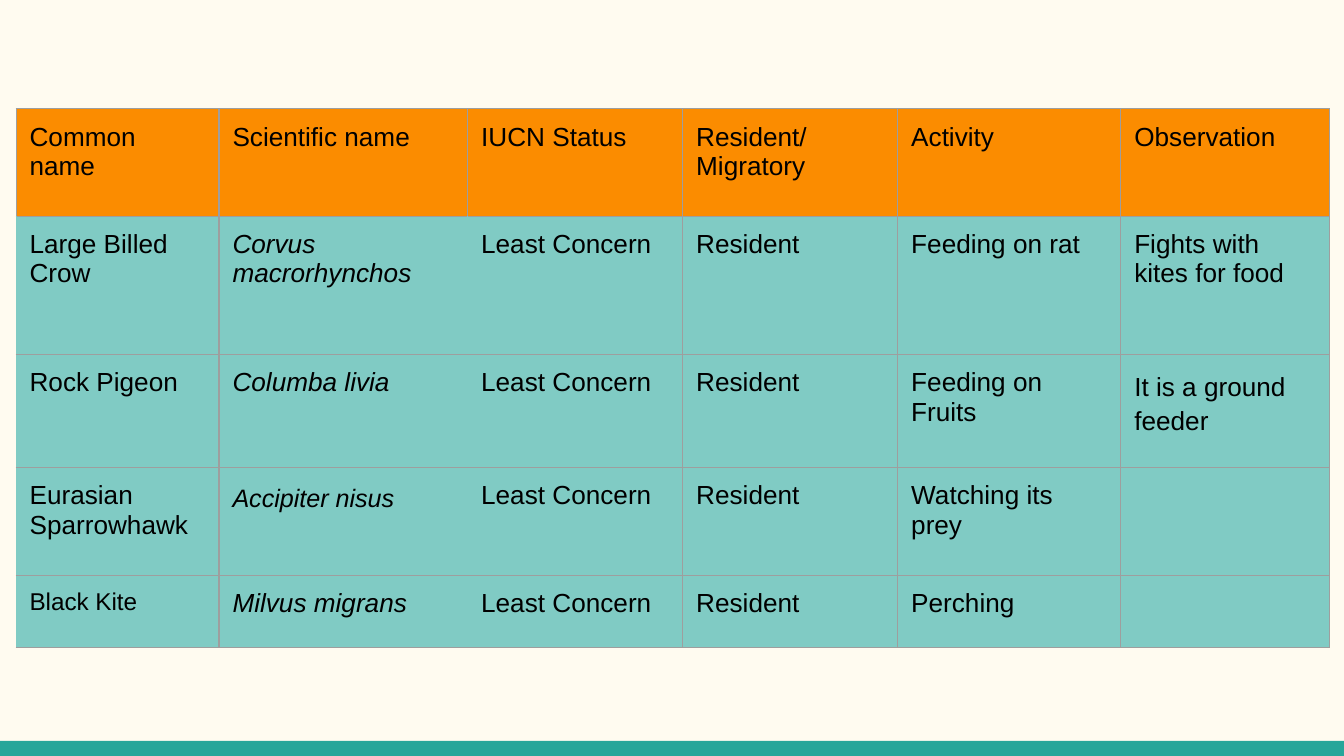
from dataclasses import dataclass

from lxml.etree import SubElement
from pptx import Presentation
from pptx.dml.color import RGBColor
from pptx.enum.shapes import MSO_SHAPE as Preset
from pptx.oxml.ns import qn
from pptx.slide import Slide
from pptx.table import _Cell as Cell
from pptx.util import Inches, Pt

SLIDE_WIDTH = Inches(10)
SLIDE_HEIGHT = SLIDE_WIDTH * 9 // 16
CREAM = RGBColor(0xFF, 0xFB, 0xF0)
GREEN = RGBColor(0x26, 0xA6, 0x9A)
ORANGE = RGBColor(0xFB, 0x8C, 0x00)
TEAL = RGBColor(0x80, 0xCB, 0xC4)
GREY = RGBColor(0x9E, 0x9E, 0x9E)
BLACK = RGBColor(0, 0, 0)

COLUMN_WIDTHS = (1.51, 1.85, 1.6, 1.6, 1.66, 1.55)
ROW_HEIGHTS = (0.8, 1.03, 0.84, 0.8, 0.54)
CELL_MARGIN = Inches(0.1)
COMMON, SCIENTIFIC, STATUS = range(3)


@dataclass(frozen=True)
class Entry:
    text: str
    size: float = 14
    italic: bool = False
    line_spacing: float | None = None
    space_after: float = 0


@dataclass(frozen=True)
class Bird:
    common: Entry
    scientific: Entry
    activity: Entry
    observation: Entry = Entry("")
    status: Entry = Entry("Least Concern")
    residence: Entry = Entry("Resident")

    def entries(self) -> tuple[Entry, ...]:
        return (self.common, self.scientific, self.status,
                self.residence, self.activity, self.observation)


HEADINGS = tuple(map(Entry, (
    "Common name", "Scientific name", "IUCN Status",
    "Resident/\nMigratory", "Activity", "Observation")))
BIRDS = (
    Bird(Entry("Large Billed Crow"), Entry("Corvus macrorhynchos", italic=True),
         Entry("Feeding on rat"), Entry("Fights with kites for food")),
    Bird(Entry("Rock Pigeon"), Entry("Columba livia", italic=True),
         Entry("Feeding on Fruits"),
         Entry("It is a ground feeder", line_spacing=1.15, space_after=12)),
    Bird(Entry("Eurasian Sparrowhawk"),
         Entry("Accipiter nisus", 13.5, italic=True, line_spacing=1.15),
         Entry("Watching its prey")),
    Bird(Entry("Black Kite", 13), Entry("Milvus migrans", italic=True),
         Entry("Perching")),
)


def border_colors(column: int, is_header: bool) -> dict[str, RGBColor]:
    """Grey on every side, except where a bird's border blends into the fill."""
    blends_left = not is_header and column in (COMMON, STATUS)
    blends_right = not is_header and column == SCIENTIFIC
    return {
        "a:lnL": TEAL if blends_left else GREY,
        "a:lnR": TEAL if blends_right else GREY,
        "a:lnT": GREY,
        "a:lnB": GREY,
    }


def draw_borders(cell: Cell, colors: dict[str, RGBColor]) -> None:
    properties = cell._tc.get_or_add_tcPr()
    for side, color in colors.items():
        line = SubElement(properties, qn(side), w=str(Pt(0.75)))
        fill = SubElement(line, qn("a:solidFill"))
        SubElement(fill, qn("a:srgbClr"), val=str(color))


def write_entry(cell: Cell, entry: Entry) -> None:
    cell.margin_left = cell.margin_right = CELL_MARGIN
    cell.margin_top = cell.margin_bottom = CELL_MARGIN
    cell.text = entry.text
    for paragraph in cell.text_frame.paragraphs:
        paragraph.space_after = Pt(entry.space_after)
        if entry.line_spacing:
            paragraph.line_spacing = entry.line_spacing
        font = paragraph.font
        font.name, font.size, font.italic = "Arial", Pt(entry.size), entry.italic
        font.color.rgb = BLACK


def draw_bird_table(slide: Slide) -> None:
    rows = (HEADINGS, *(bird.entries() for bird in BIRDS))
    table = slide.shapes.add_table(
        len(rows), len(HEADINGS), Inches(0.12), Inches(0.81),
        Inches(sum(COLUMN_WIDTHS)), Inches(sum(ROW_HEIGHTS))).table
    table.first_row = table.horz_banding = False
    for column, width in zip(table.columns, COLUMN_WIDTHS):
        column.width = Inches(width)
    for row, height in zip(table.rows, ROW_HEIGHTS):
        row.height = Inches(height)
    for r, entries in enumerate(rows):
        for c, entry in enumerate(entries):
            cell = table.cell(r, c)
            write_entry(cell, entry)
            draw_borders(cell, border_colors(c, is_header=r == 0))
            cell.fill.solid()
            cell.fill.fore_color.rgb = ORANGE if r == 0 else TEAL


def draw_footer_band(slide: Slide) -> None:
    height = round(SLIDE_HEIGHT * 0.02)
    band = slide.shapes.add_shape(
        Preset.RECTANGLE, 0, SLIDE_HEIGHT - height, SLIDE_WIDTH, height)
    band.shadow.inherit = False
    band.fill.solid()
    band.fill.fore_color.rgb = GREEN
    band.line.fill.background()


def main() -> None:
    presentation = Presentation()
    presentation.slide_width, presentation.slide_height = SLIDE_WIDTH, SLIDE_HEIGHT
    slide = presentation.slides.add_slide(presentation.slide_layouts[6])
    slide.background.fill.solid()
    slide.background.fill.fore_color.rgb = CREAM
    draw_footer_band(slide)
    draw_bird_table(slide)
    presentation.save("out.pptx")


if __name__ == "__main__":
    main()
